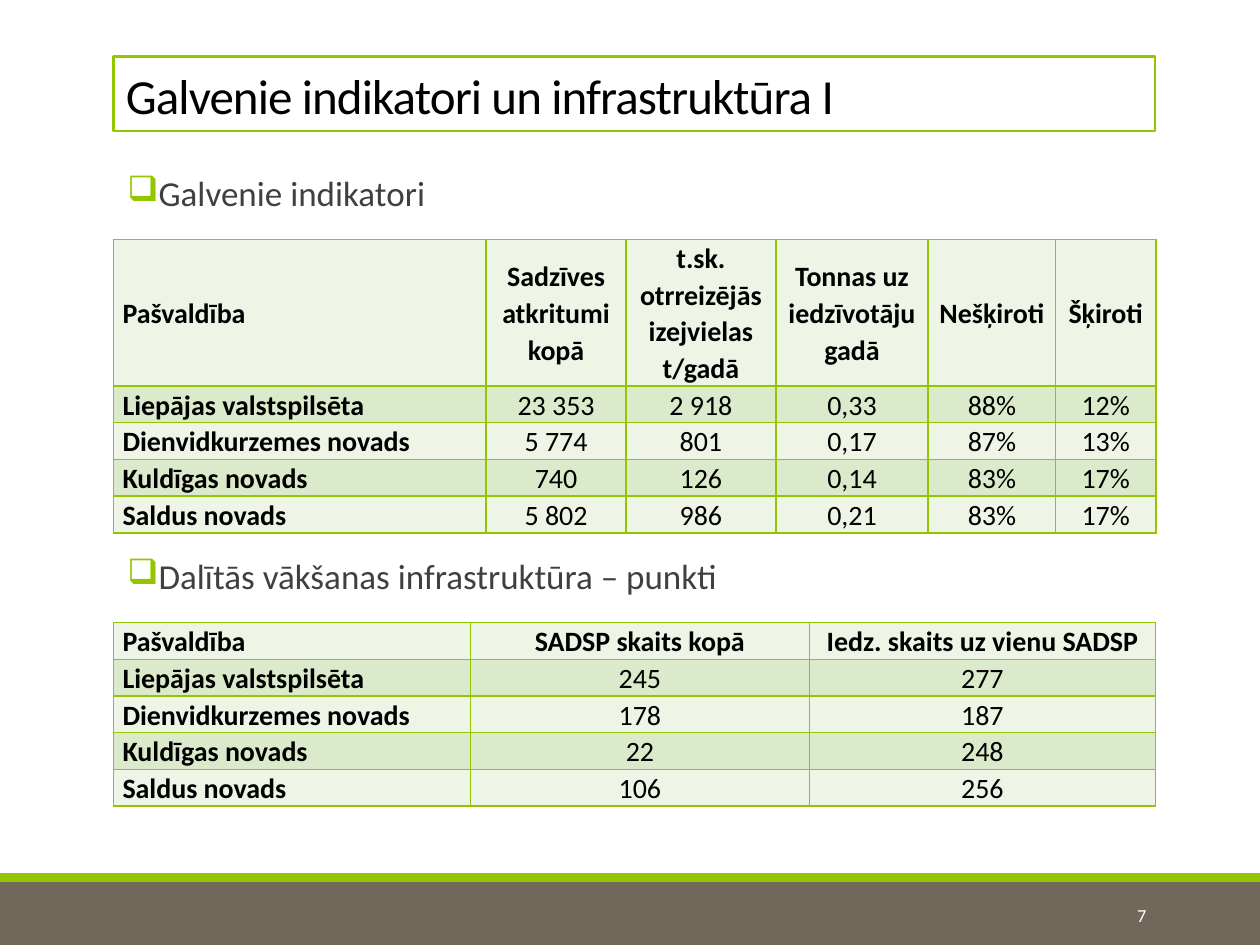
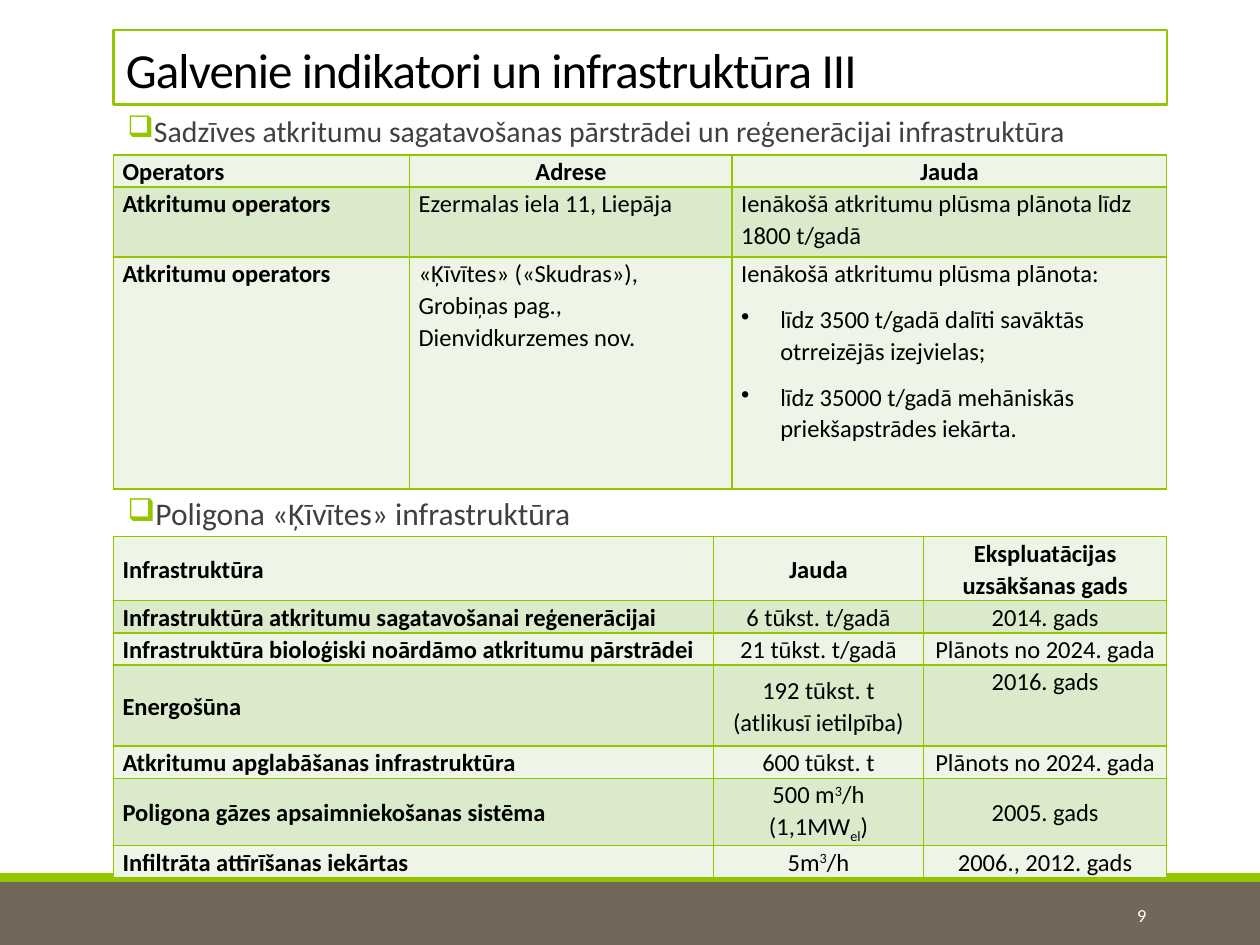
from pptx import Presentation
from pptx.dml.color import RGBColor
from pptx.enum.shapes import MSO_SHAPE as Preset
from pptx.enum.text import MSO_ANCHOR as Anchor, PP_ALIGN as Align
from pptx.oxml.ns import qn
from pptx.util import Cm, Pt
from lxml.etree import SubElement

COLORS = {"green": "94C600", "brown": "71685A", "white": "FFFFFF",
          "black": "000000", "grey": "404040",
          "light row": "EEF5E7", "dark row": "DCEACC"}
FONT = "Calibri"
SLIDE_WIDTH, SLIDE_HEIGHT = 25.4, 19.05
LEFT, HEADING_LEFT = 2.29, 1.5
HEADING_HEIGHT = 1.35
LINE = 0.74  # height of a one-line row at 16 pt
SMALL_LINE = 0.65  # height of a one-line row at 14 pt


def rgb(name):
    return RGBColor.from_string(COLORS[name])


def set_values(target, values):
    for name, value in values.items():
        setattr(target, name, value)


def add_run(paragraph, text, size, color, bold=False):
    run = paragraph.add_run()
    run.text = text
    set_values(run.font, {"name": FONT, "size": Pt(size), "bold": bold})
    run.font.color.rgb = rgb(color)
    return run


def add_bullet(paragraph, symbol, margin, hanging, color=None):
    """Call after the paragraph spacing is set, as bullets follow it in XML."""
    properties = paragraph._p.get_or_add_pPr()
    properties.set("marL", str(Cm(margin)))
    properties.set("indent", str(-Cm(hanging)))
    if color:
        bullet_color = SubElement(properties, qn("a:buClr"))
        SubElement(bullet_color, qn("a:srgbClr")).set("val", COLORS[color])
    SubElement(properties, qn("a:buChar")).set("char", symbol)


def add_rectangle(slide, box, fill, line=None):
    shape = slide.shapes.add_shape(Preset.RECTANGLE, *map(Cm, box))
    shape.shadow.inherit = False
    shape.fill.solid()
    shape.fill.fore_color.rgb = rgb(fill)
    if line:
        shape.line.color.rgb = rgb(line)
        shape.line.width = Pt(1.25)
    else:
        shape.line.fill.background()
    return shape


def add_title(slide, box, text):
    frame = add_rectangle(slide, box, "white", "green").text_frame
    set_values(frame, {"vertical_anchor": Anchor.BOTTOM, "word_wrap": True})
    paragraph = frame.paragraphs[0]
    set_values(paragraph, {"alignment": Align.LEFT, "line_spacing": 0.85})
    run = add_run(paragraph, text, 28, "black")
    run.font._element.set("spc", "-50")


def add_heading(slide, box, text, size, line_spacing=0.9):
    frame = add_rectangle(slide, box, "white").text_frame
    set_values(frame, {"vertical_anchor": Anchor.TOP, "word_wrap": True,
                       "margin_left": 0, "margin_right": 0})
    paragraph = frame.paragraphs[0]
    set_values(paragraph, {"alignment": Align.LEFT, "line_spacing": line_spacing,
                           "space_before": Pt(2), "space_after": Pt(4)})
    add_bullet(paragraph, "❑", 1.57, 0.5, "green")
    add_run(paragraph, text, size, "grey")


def add_footer(slide, page_number):
    add_rectangle(slide, (0, 17.78, SLIDE_WIDTH, 1.27), "brown")
    add_rectangle(slide, (0, 17.6, SLIDE_WIDTH, 0.18), "green")
    box = slide.shapes.add_textbox(*map(Cm, (20.62, 17.93, 2.74, 1.02)))
    set_values(box.text_frame, {"vertical_anchor": Anchor.MIDDLE, "word_wrap": True})
    paragraph = box.text_frame.paragraphs[0]
    paragraph.alignment = Align.RIGHT
    add_run(paragraph, str(page_number), 10.5, "white")


def style_cell(cell, fill, anchor):
    set_values(cell, {"margin_left": Cm(0.18), "margin_right": Cm(0.18),
                      "margin_top": 0, "margin_bottom": 0,
                      "vertical_anchor": anchor})
    properties = cell._tc.get_or_add_tcPr()
    for side in ("lnL", "lnR", "lnT", "lnB"):
        border = SubElement(properties, qn(f"a:{side}"))
        border.set("w", str(Pt(1)))
        border_fill = SubElement(border, qn("a:solidFill"))
        SubElement(border_fill, qn("a:srgbClr")).set("val", COLORS["green"])
    cell.fill.solid()
    cell.fill.fore_color.rgb = rgb(fill)


def write_cell(cell, content, size, bold, alignment):
    """Content is text, whose lines after the first are bulleted,
    or a list of (text, baseline in percent) runs."""
    lines = content.split("\n") if isinstance(content, str) else [content]
    for index, line in enumerate(lines):
        frame = cell.text_frame
        paragraph = frame.add_paragraph() if index else frame.paragraphs[0]
        set_values(paragraph, {"alignment": alignment, "line_spacing": 1.07,
                               "space_after": Pt(8)})
        if index:
            add_bullet(paragraph, "•", 0.79, 0.79)
        for text, baseline in [(line, 0)] if isinstance(line, str) else line:
            run = add_run(paragraph, text, size, "black", bold)
            if baseline:
                run.font._element.set("baseline", str(baseline * 1000))


def add_data_table(slide, top, widths, heights, rows, size,
                   anchor=Anchor.MIDDLE, body_alignment=Align.CENTER):
    box = (LEFT, top, sum(widths), sum(heights))
    table = slide.shapes.add_table(len(rows), len(widths), *map(Cm, box)).table
    set_values(table, {"first_row": False, "horz_banding": False})
    for column, width in zip(table.columns, widths):
        column.width = Cm(width)
    for row, height in zip(table.rows, heights):
        row.height = Cm(height)
    for r, row in enumerate(rows):
        for c, content in enumerate(row):
            cell = table.cell(r, c)
            style_cell(cell, "dark row" if r % 2 else "light row", anchor)
            if c == 0:
                alignment = Align.LEFT
            else:
                alignment = body_alignment if r else Align.CENTER
            write_cell(cell, content, size, r == 0 or c == 0, alignment)
    return table


def add_indicator_slide(presentation):
    slide = presentation.slides.add_slide(presentation.slide_layouts[6])
    add_footer(slide, 7)
    add_title(slide, (LEFT, 1.14, 21, 1.5), "Galvenie indikatori un infrastruktūra I")

    add_heading(slide, (HEADING_LEFT, 3.43, 10.97, HEADING_HEIGHT),
                "Galvenie indikatori", 20)
    add_data_table(slide, 4.83, (7.51, 2.82, 3.02, 3.07, 2.57, 2.02),
                   [2.95] + [LINE] * 4, [
        ("Pašvaldība", "Sadzīves atkritumi kopā",
         "t.sk. otrreizējās izejvielas t/gadā",
         "Tonnas uz iedzīvotāju gadā", "Nešķiroti", "Šķiroti"),
        ("Liepājas valstspilsēta", "23 353", "2 918", "0,33", "88%", "12%"),
        ("Dienvidkurzemes novads", "5 774", "801", "0,17", "87%", "13%"),
        ("Kuldīgas novads", "740", "126", "0,14", "83%", "17%"),
        ("Saldus novads", "5 802", "986", "0,21", "83%", "17%"),
    ], 16)

    add_heading(slide, (HEADING_LEFT, 11.15, 16.03, HEADING_HEIGHT),
                "Dalītās vākšanas infrastruktūra – punkti", 20)
    add_data_table(slide, 12.55, (7.19, 6.84, 6.97), [LINE] * 5, [
        ("Pašvaldība", "SADSP skaits kopā", "Iedz. skaits uz vienu SADSP"),
        ("Liepājas valstspilsēta", "245", "277"),
        ("Dienvidkurzemes novads", "178", "187"),
        ("Kuldīgas novads", "22", "248"),
        ("Saldus novads", "106", "256"),
    ], 16)


def add_infrastructure_slide(presentation):
    slide = presentation.slides.add_slide(presentation.slide_layouts[6])
    add_footer(slide, 9)
    add_title(slide, (LEFT, 0.61, 21.23, 1.5),
              "Galvenie indikatori un infrastruktūra III")

    add_heading(slide, (HEADING_LEFT, 2.29, 20.62, HEADING_HEIGHT),
                "Sadzīves atkritumu sagatavošanas pārstrādei un reģenerācijai "
                "infrastruktūra", 17, 0.8)
    operator = "Atkritumu operators"
    add_data_table(slide, 3.12, (5.97, 6.5, 8.76), (SMALL_LINE, 1.41, 4.68), [
        ("Operators", "Adrese", "Jauda"),
        (operator, "Ezermalas iela 11, Liepāja",
         "Ienākošā atkritumu plūsma plānota līdz 1800 t/gadā"),
        (operator, "«Ķīvītes» («Skudras»), Grobiņas pag., Dienvidkurzemes nov.",
         "Ienākošā atkritumu plūsma plānota:\n"
         "līdz 3500 t/gadā dalīti savāktās otrreizējās izejvielas;\n"
         "līdz 35000 t/gadā mehāniskās priekšapstrādes iekārta."),
    ], 14, Anchor.TOP, Align.LEFT)

    add_heading(slide, (HEADING_LEFT, 9.93, 20.62, HEADING_HEIGHT),
                "Poligona «Ķīvītes» infrastruktūra", 18)
    heights = (1.29, SMALL_LINE, SMALL_LINE, 1.63, SMALL_LINE, 1.34, SMALL_LINE)
    landfill = add_data_table(slide, 10.82, (12.09, 4.24, 4.9), heights, [
        ("Infrastruktūra", "Jauda", "Ekspluatācijas uzsākšanas gads"),
        ("Infrastruktūra atkritumu sagatavošanai reģenerācijai",
         "6 tūkst. t/gadā", "2014. gads"),
        ("Infrastruktūra bioloģiski noārdāmo atkritumu pārstrādei",
         "21 tūkst. t/gadā", "Plānots no 2024. gada"),
        ("Energošūna", "192 tūkst. t (atlikusī ietilpība)", "2016. gads"),
        ("Atkritumu apglabāšanas infrastruktūra", "600 tūkst. t",
         "Plānots no 2024. gada"),
        ("Poligona gāzes apsaimniekošanas sistēma",
         [("500 m", 0), ("3", 30), ("/h (1,1MW", 0), ("el", -25), (")", 0)],
         "2005. gads"),
        ("Infiltrāta attīrīšanas iekārtas",
         [("5m", 0), ("3", 30), ("/h", 0)], "2006., 2012. gads"),
    ], 14)
    landfill.cell(3, 2).vertical_anchor = Anchor.TOP


def main():
    presentation = Presentation()
    set_values(presentation, {"slide_width": Cm(SLIDE_WIDTH),
                              "slide_height": Cm(SLIDE_HEIGHT)})
    add_indicator_slide(presentation)
    add_infrastructure_slide(presentation)
    presentation.save("out.pptx")


if __name__ == "__main__":
    main()
